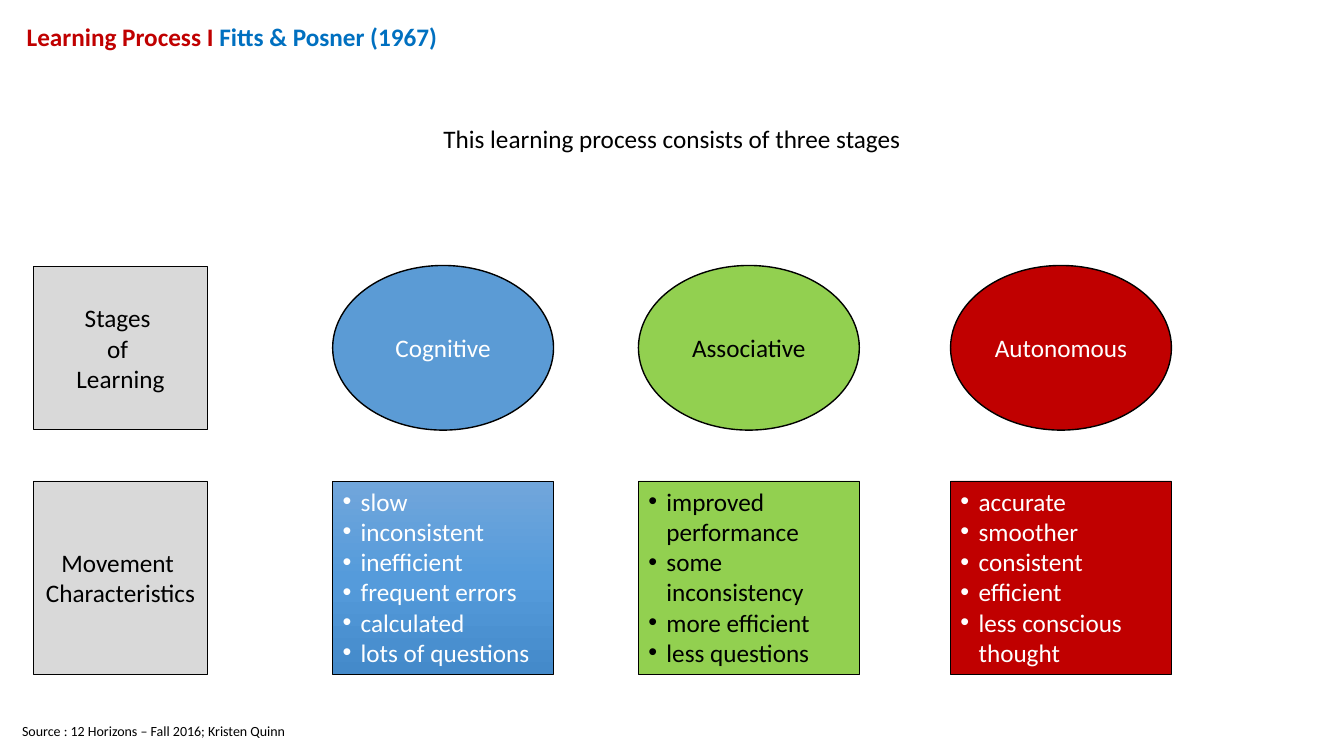
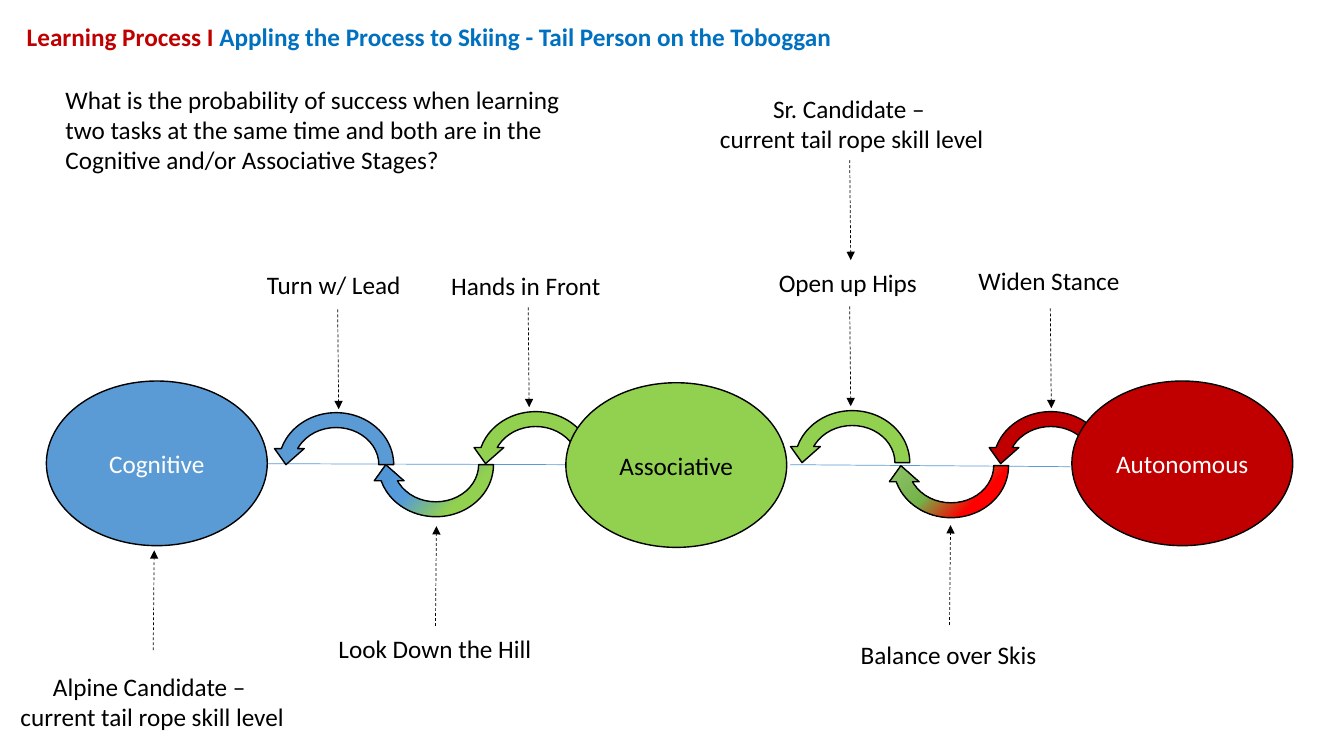
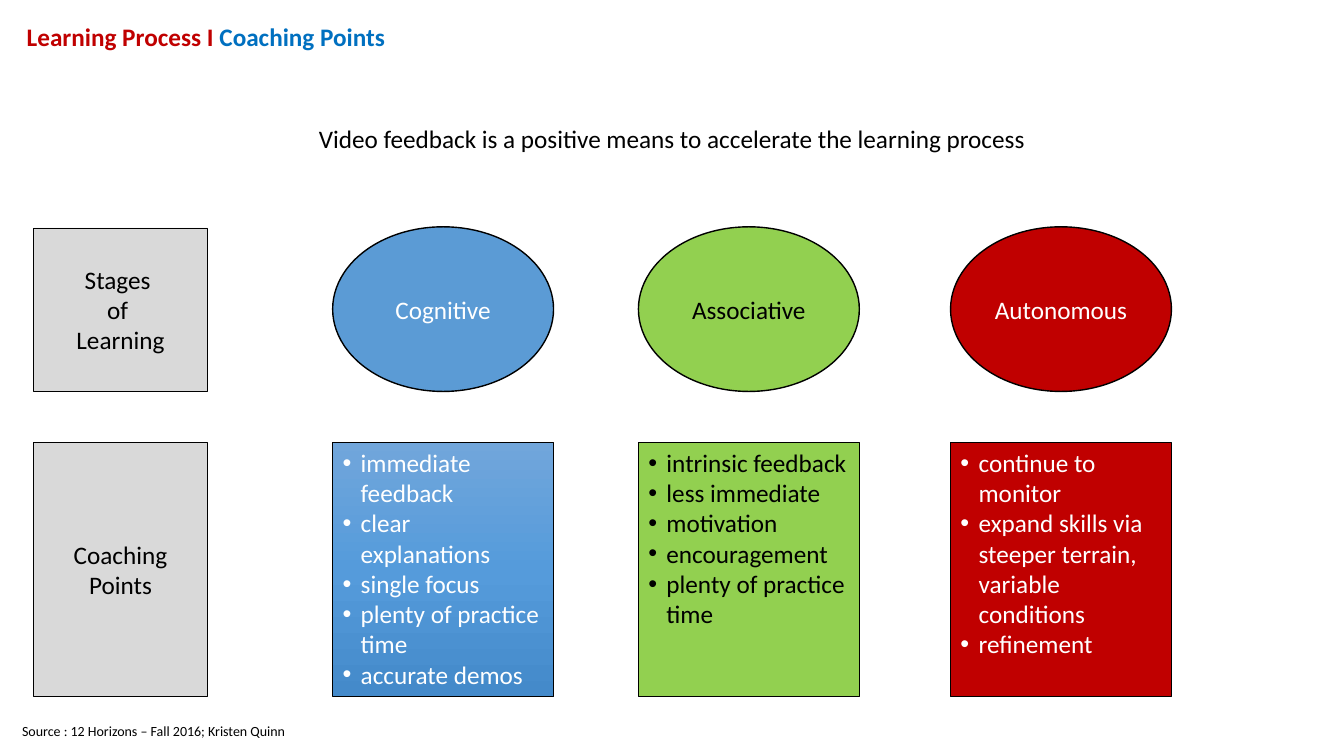
from lxml.etree import SubElement
from pptx import Presentation
from pptx.dml.color import RGBColor
from pptx.enum.dml import MSO_LINE
from pptx.enum.shapes import MSO_CONNECTOR, MSO_SHAPE
from pptx.enum.text import MSO_ANCHOR, MSO_AUTO_SIZE, PP_ALIGN
from pptx.oxml import parse_xml
from pptx.oxml.ns import nsdecls, qn
from pptx.util import Inches, Pt

BLACK = RGBColor(0x00, 0x00, 0x00)
WHITE = RGBColor(0xFF, 0xFF, 0xFF)
GRAY = RGBColor(0xD9, 0xD9, 0xD9)
BLUE = RGBColor(0x5B, 0x9B, 0xD5)
GREEN = RGBColor(0x92, 0xD0, 0x50)
RED = RGBColor(0xC0, 0x00, 0x00)
TITLE_BLUE = RGBColor(0x00, 0x70, 0xC0)
SKY, DEEP_BLUE = RGBColor(0x55, 0x9B, 0xDB), RGBColor(0x44, 0x8A, 0xCA)
PANEL_BLUE = (90, [(0, RGBColor(0x71, 0xA6, 0xDB)), (50, SKY), (100, DEEP_BLUE)])
GREEN_TO_BLUE = (45, [(27, GREEN), (50, SKY), (100, DEEP_BLUE)])
RED_TO_GREEN = (45, [(26, RGBColor(0xFF, 0x00, 0x00)), (48, RGBColor(0x74, 0xB3, 0x49)),
                     (100, RGBColor(0xA9, 0xD1, 0x8E))])

FONT = "Calibri"
COLUMNS, ROWS = 80, 45
OVAL_WIDTH, OVAL_HEIGHT = 13.15, 9.8
LABEL_WIDTH = 10.35
STAGES = [
    ("Cognitive", BLUE, PANEL_BLUE, WHITE, 19.8),
    ("Associative", GREEN, GREEN, BLACK, 38),
    ("Autonomous", RED, RED, WHITE, 56.58),
]

presentation = Presentation()
presentation.slide_width = Inches(13.33)
presentation.slide_height = Inches(7.5)
CELL_WIDTH = presentation.slide_width / COLUMNS
CELL_HEIGHT = presentation.slide_height / ROWS


def add_box(slide, kind, cells, fill=None, line_width=0.5):
    left, top, width, height = cells
    place = [round(left * CELL_WIDTH), round(top * CELL_HEIGHT),
             round(width * CELL_WIDTH), round(height * CELL_HEIGHT)]
    if kind is None:
        shape = slide.shapes.add_textbox(*place)
        shape.text_frame.word_wrap = width == COLUMNS
        shape.text_frame.auto_size = MSO_AUTO_SIZE.SHAPE_TO_FIT_TEXT
        return shape
    shape = slide.shapes.add_shape(kind, *place)
    shape.shadow.inherit = False
    shape.line.color.rgb = BLACK
    shape.line.width = Pt(line_width)
    if isinstance(fill, RGBColor):
        shape.fill.solid()
        shape.fill.fore_color.rgb = fill
    else:
        angle, stops = fill
        stop_xml = "".join(f'<a:gs pos="{share * 1000}"><a:srgbClr val="{color}"/></a:gs>'
                           for share, color in stops)
        shape.fill.background()
        properties = shape._element.spPr
        properties.replace(properties.find(qn("a:noFill")), parse_xml(
            f'<a:gradFill {nsdecls("a")} rotWithShape="1"><a:gsLst>{stop_xml}</a:gsLst>'
            f'<a:lin ang="{angle * 60000}" scaled="0"/></a:gradFill>'))
    return shape


def write(shape, lines, color=BLACK, align=PP_ALIGN.CENTER, anchor=MSO_ANCHOR.MIDDLE,
          size=18, bullets=False):
    frame = shape.text_frame
    frame.vertical_anchor = anchor
    for index, line in enumerate(lines):
        paragraph = frame.paragraphs[0] if index == 0 else frame.add_paragraph()
        paragraph.add_run().text = line
        paragraph.alignment = align
        if bullets:
            properties = paragraph._p.get_or_add_pPr()
            properties.set("marL", str(Inches(0.18)))
            properties.set("indent", str(-Inches(0.18)))
            SubElement(properties, qn("a:buFont")).set("typeface", "Arial")
            SubElement(properties, qn("a:buChar")).set("char", "•")
        paragraph.font.name = FONT
        paragraph.font.size = Pt(size)
        paragraph.font.color.rgb = color


slides = []
for heading, width in [
    ("Fitts & Posner (1967)", 25.9),
    ("Appling the Process to Skiing - Tail Person on the Toboggan", 49.2),
    ("Coaching Points", 22.7),
]:
    slide = presentation.slides.add_slide(presentation.slide_layouts[6])
    title = add_box(slide, None, (1, 1, width, 2.4))
    write(title, ["Learning Process I "], RED, PP_ALIGN.LEFT, MSO_ANCHOR.TOP)
    paragraph = title.text_frame.paragraphs[0]
    paragraph.font.bold = True
    run = paragraph.add_run()
    run.text = heading
    run.font.color.rgb = TITLE_BLUE
    slides.append(slide)

overview, journey, coaching = slides

for slide, caption, oval_top, panel_height, panel_label, panels in [
    (overview, "This learning process consists of three stages", 15.8, 11.5,
     ["Movement ", "Characteristics"], [
         ["slow", "inconsistent", "inefficient", "frequent errors", "calculated",
          "lots of questions"],
         ["improved performance", "some inconsistency", "more efficient", "less questions"],
         ["accurate", "smoother", "consistent", "efficient", "less conscious thought"],
     ]),
    (coaching, "Video feedback is a positive means to accelerate the learning process",
     13.5, 15.15, ["Coaching Points"], [
         ["immediate feedback", "clear explanations", "single focus",
          "plenty of practice time", "accurate demos"],
         ["intrinsic feedback", "less immediate", "motivation", "encouragement",
          "plenty of practice time"],
         ["continue to monitor", "expand skills via steeper terrain, variable conditions",
          "refinement"],
     ]),
]:
    panel_top = oval_top + 12.83
    for lines, top, height in [
        (["Stages ", "of ", "Learning"], oval_top + 0.07, OVAL_HEIGHT - 0.1),
        (panel_label, panel_top, panel_height),
    ]:
        label = add_box(slide, MSO_SHAPE.RECTANGLE, (2, top, LABEL_WIDTH, height), GRAY)
        write(label, lines)
    for (name, oval_fill, panel_fill, color, left), points in zip(STAGES, panels):
        panel = add_box(slide, MSO_SHAPE.RECTANGLE,
                        (left, panel_top, OVAL_WIDTH, panel_height), panel_fill)
        write(panel, points, color, PP_ALIGN.LEFT, MSO_ANCHOR.TOP, bullets=True)
        oval = add_box(slide, MSO_SHAPE.OVAL,
                       (left, oval_top, OVAL_WIDTH, OVAL_HEIGHT), oval_fill, 1)
        write(oval, [name], color)
    write(add_box(slide, None, (0, 7.05, COLUMNS, 2.4)), [caption])
    write(add_box(slide, None, (0.72, 42.7, 17, 1.6)),
          ["Source : 12 Horizons – Fall 2016; Kristen Quinn"], align=PP_ALIGN.LEFT, size=10)

question = add_box(journey, None, (3.3, 4.7, 31.74, 6.06))
question.text_frame.word_wrap = True
write(question, ["What is the probability of success when learning two tasks at the same time "
                 "and both are in the Cognitive and/or Associative Stages?"],
      align=PP_ALIGN.LEFT, anchor=MSO_ANCHOR.TOP)

tracks = [(15.9, 27.6, 33.66, 27.66), (47.04, 27.66, 63.72, 27.78)]
down_pointers = [(x, y, x + 0.06, y + 5.94) for x, y in [
    (62.52, 18.36), (20.1, 18.42), (31.44, 18.3), (50.58, 18.24), (50.58, 9.54)]]
up_pointers = [(x, y, x + 0.06, y - 5.94) for x, y in [
    (25.92, 37.26), (56.52, 37.2), (9.12, 38.7)]]
for ends in tracks + down_pointers + up_pointers:
    x1, y1, x2, y2 = ends
    connector = journey.shapes.add_connector(
        MSO_CONNECTOR.STRAIGHT, round(x1 * CELL_WIDTH), round(y1 * CELL_HEIGHT),
        round(x2 * CELL_WIDTH), round(y2 * CELL_HEIGHT))
    connector.line.width = Pt(0.5)
    connector.line.color.rgb = BLUE if ends in tracks else BLACK
    if ends not in tracks:
        connector.line.dash_style = MSO_LINE.DASH
        SubElement(connector.line._ln, qn("a:tailEnd")).set("type", "triangle")
    SubElement(connector._element.spPr, qn("a:effectLst"))

for left, top, fill, upside_down in [
    (58.68, 24.06, RED, False),
    (46.86, 24, GREEN, False),
    (16.14, 24.12, BLUE, False),
    (28.02, 24.06, GREEN, False),
    (52.74, 24.18, RED_TO_GREEN, True),
    (22.08, 24.12, GREEN_TO_BLUE, True),
]:
    arc = add_box(journey, MSO_SHAPE.CIRCULAR_ARROW, (left, top, 7.74, 7.08), fill, 1)
    transform = arc._element.spPr.find(qn("a:xfrm"))
    transform.set("flipH", "1")
    if upside_down:
        transform.set("flipV", "1")

for (name, fill, _, color, _), (left, top) in zip(
        STAGES, [(2.76, 22.68), (33.68, 22.78), (63.8, 22.68)]):
    oval = add_box(journey, MSO_SHAPE.OVAL, (left, top, OVAL_WIDTH, OVAL_HEIGHT), fill, 1)
    write(oval, [name], color)

for lines, left, top, width in [
    (["Widen Stance"], 57.65, 15.5, 9.72),
    (["Open up Hips"], 45.77, 15.6, 9.54),
    (["Look Down the Hill"], 19.56, 37.4, 12.84),
    (["Hands in Front"], 26.26, 15.8, 10.2),
    (["Turn w/ Lead"], 15.3, 15.75, 9.6),
    (["Balance over Skis"], 50.64, 37.75, 11.76),
    (["Sr. Candidate – ", "current tail rope skill level"], 42.18, 5.25, 17.04),
    (["Alpine Candidate – ", "current tail rope skill level"], 0.54, 39.65, 17.04),
]:
    label = add_box(journey, None, (left, top, width, 0.54 + 1.86 * len(lines)))
    align = PP_ALIGN.LEFT if len(lines) == 1 else PP_ALIGN.CENTER
    write(label, lines, align=align, anchor=MSO_ANCHOR.TOP)

presentation.save("out.pptx")
